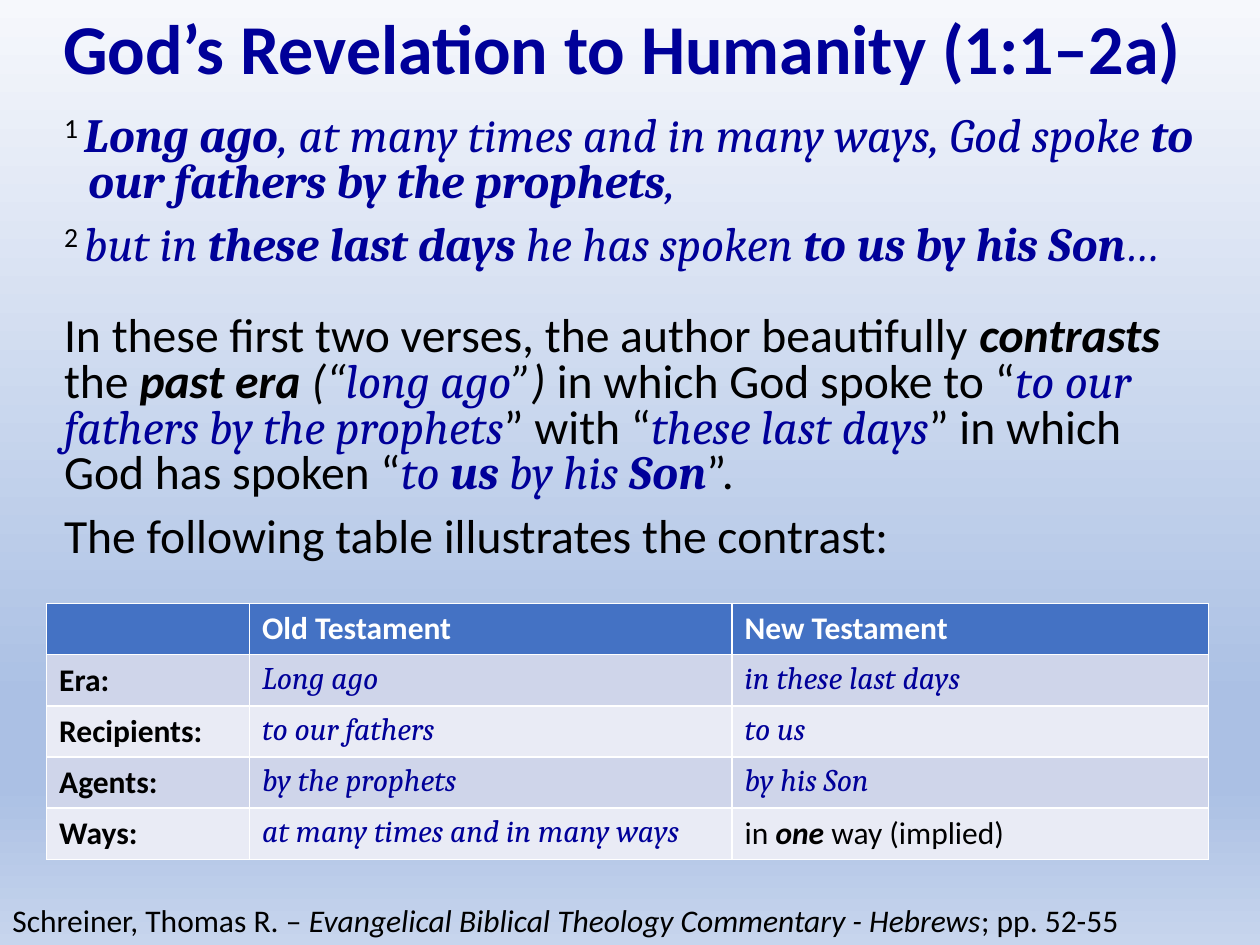
"""Build a slide contrasting God's revelation in the two testaments."""
from lxml import etree
from pptx import Presentation
from pptx import util as u
from pptx.dml.color import RGBColor
from pptx.enum import text
from pptx.oxml.ns import qn

NAVY = RGBColor(0x00, 0x00, 0x99)
BLACK = RGBColor(0x00, 0x00, 0x00)
WHITE = RGBColor(0xFF, 0xFF, 0xFF)
BLUE = RGBColor(0x44, 0x72, 0xC4)
BANDS = [RGBColor(0xCF, 0xD5, 0xEA), RGBColor(0xE9, 0xEB, 0xF5)]
SKY = [(0, "F6F8FC"), (74, "ABC0E4"), (83, "ABC0E4"), (100, "C7D5ED")]


def style(name, color, bold=False, italic=False):
    return {"name": name, "color": color, "bold": bold, "italic": italic}


STYLES = {
    "plain": style("Calibri", BLACK),
    "super": style("Calibri", BLACK),
    "ital": style("Calibri", BLACK, italic=True),
    "strong": style("Calibri", BLACK, True, True),
    "label": style("Calibri", BLACK, True),
    "head": style("Calibri", WHITE, True),
    "title": style("Calibri", NAVY, True),
    "verse": style("Cambria", NAVY, italic=True),
    "key": style("Cambria", NAVY, True, True),
}

TITLE = [("title", "God’s Revelation to Humanity (1:1–2a) ")]
SOURCE = [("plain", "Schreiner, Thomas R. – "),
          ("ital", "Evangelical Biblical Theology Commentary - Hebrews"),
          ("plain", "; pp. 52-55")]
VERSES = [
    [("super", "1 "), ("key", "Long ago"),
     ("verse", ", at many times and in many ways, God spoke "),
     ("key", "to our fathers by the prophets"), ("verse", ",")],
    [("super", "2 "), ("verse", "but in"), ("key", " these last days "),
     ("verse", "he has spoken "), ("key", "to us by his Son"), ("verse", "…")],
]
NOTES = [
    [("plain", "In these first two verses, the author beautifully "),
     ("strong", "contrasts"), ("plain", " the "), ("strong", "past era "),
     ("ital", "(“"), ("verse", "long ago"), ("ital", "”) "),
     ("plain", "in which God spoke to “"),
     ("verse", "to our fathers by the prophets"), ("plain", "” with “"),
     ("verse", "these last days"), ("plain", "” in which God has spoken “"),
     ("verse", "to "), ("key", "us"), ("verse", " by his "), ("key", "Son"),
     ("plain", "”.")],
    [("plain", "The following table illustrates the contrast:")],
]
HEADS = ["", "Old Testament", "New Testament"]
ROWS = [
    ("Era:", "Long ago", "in these last days"),
    ("Recipients:", "to our fathers", "to us"),
    ("Agents:", "by the prophets", "by his Son"),
    ("Ways:", "at many times and in many ways",
     [("plain", "in "), ("strong", "one"), ("plain", " way (implied)")]),
]
WIDTHS = [1.61, 3.83, 3.78]


def apply(item, values):
    for key, value in values.items():
        setattr(item, key, value)


def write(para, runs, size):
    for kind, words in runs:
        run = para.add_run()
        run.text = words
        values = dict(STYLES[kind], size=u.Pt(size))
        run.font.color.rgb = values.pop("color")
        apply(run.font, values)
        if kind == "super":
            run.font._element.set("baseline", "30000")


def place(shape, left, top, width, height):
    apply(shape, {"left": u.Inches(left), "top": u.Inches(top),
                  "width": u.Inches(width), "height": u.Inches(height)})


def add_text(slide, *box):
    frame = slide.shapes.add_textbox(*map(u.Inches, box)).text_frame
    frame.word_wrap = True
    return frame


def paint_sky(slide):
    fill = slide.background.fill
    fill.gradient()
    fill.gradient_angle = 270
    stops = slide.element.find(".//" + qn("a:gsLst"))
    for stop in list(stops):
        stops.remove(stop)
    for spot, color in SKY:
        stop = etree.SubElement(stops, qn("a:gs"), pos=str(spot * 1000))
        etree.SubElement(stop, qn("a:srgbClr"), val=color)


def add_title(slide):
    title = slide.shapes.title
    place(title, 0, 0, 10, 0.82)
    frame = title.text_frame
    apply(frame, {"vertical_anchor": text.MSO_ANCHOR.MIDDLE,
                  "auto_size": text.MSO_AUTO_SIZE.NONE, "word_wrap": True})
    para = frame.paragraphs[0]
    apply(para, {"alignment": text.PP_ALIGN.CENTER, "line_spacing": 0.9})
    write(para, TITLE, 40)


def add_body(slide):
    frame = add_text(slide, 0.41, 0.87, 9.18, 3.64)
    for i, runs in enumerate(VERSES + NOTES):
        para = frame.add_paragraph() if i else frame.paragraphs[0]
        gap = 26 if i == len(VERSES) else 10
        apply(para, {"line_spacing": 0.8, "space_before": u.Pt(gap)})
        if i < len(VERSES):
            props = para._p.get_or_add_pPr()
            props.set("marL", str(u.Inches(0.19)))
            props.set("indent", str(-u.Inches(0.19)))
        write(para, runs, 27.2)


def add_grid(slide):
    box = map(u.Inches, (0.37, 4.79, sum(WIDTHS), 2.03))
    grid = slide.shapes.add_table(len(ROWS) + 1, len(HEADS), *box).table
    for col, width in zip(grid.columns, WIDTHS):
        col.width = u.Inches(width)
    for r, row in enumerate([HEADS] + ROWS):
        for c, words in enumerate(row):
            cell = grid.cell(r, c)
            cell.fill.solid()
            cell.fill.fore_color.rgb = BANDS[(r - 1) % 2] if r else BLUE
            kind = "head" if r == 0 else "verse" if c else "label"
            runs = [(kind, words)] if isinstance(words, str) else words
            if words:
                write(cell.text_frame.paragraphs[0], runs, 18)


def main():
    deck = Presentation()
    apply(deck, {"slide_width": u.Inches(10), "slide_height": u.Inches(7.5)})
    slide = deck.slides.add_slide(deck.slide_layouts[5])
    paint_sky(slide)
    add_title(slide)
    write(add_text(slide, 0, 7.1, 10, 0.4).paragraphs[0], SOURCE, 18)
    add_body(slide)
    add_grid(slide)
    deck.save("out.pptx")


if __name__ == "__main__":
    main()
